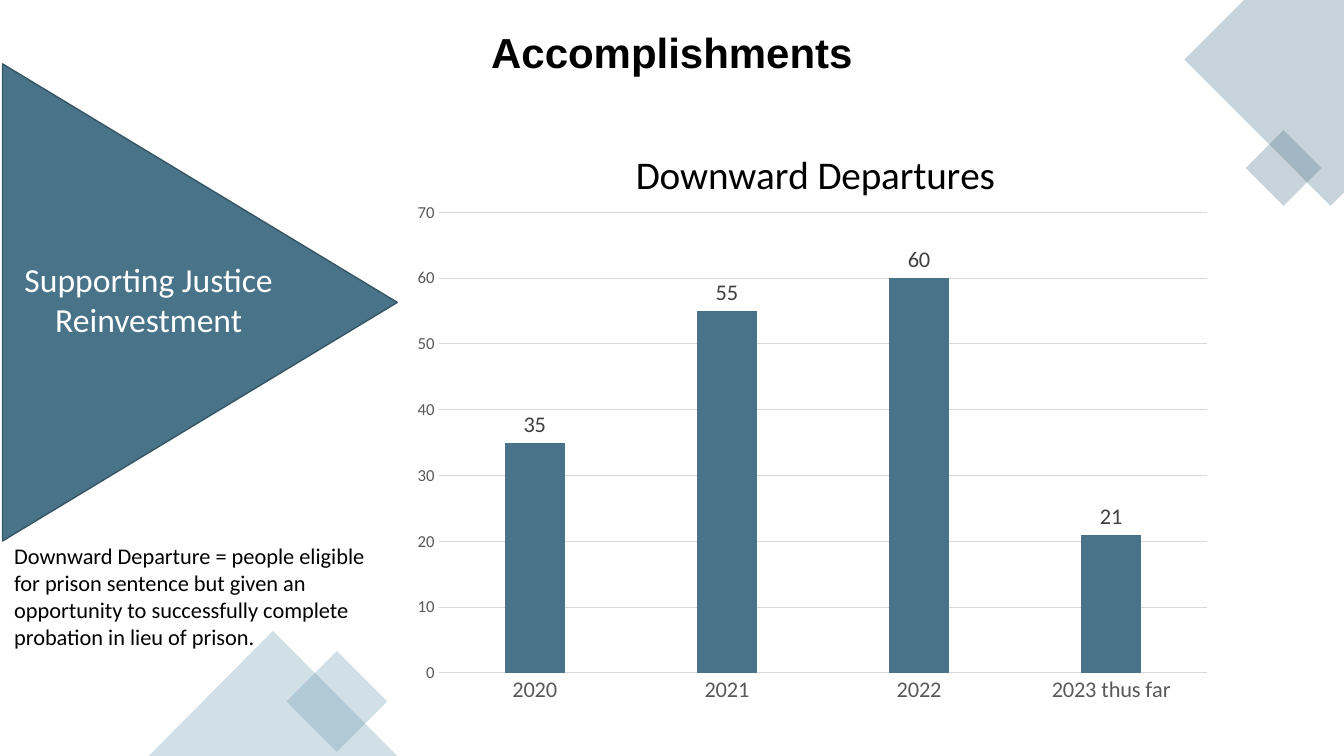
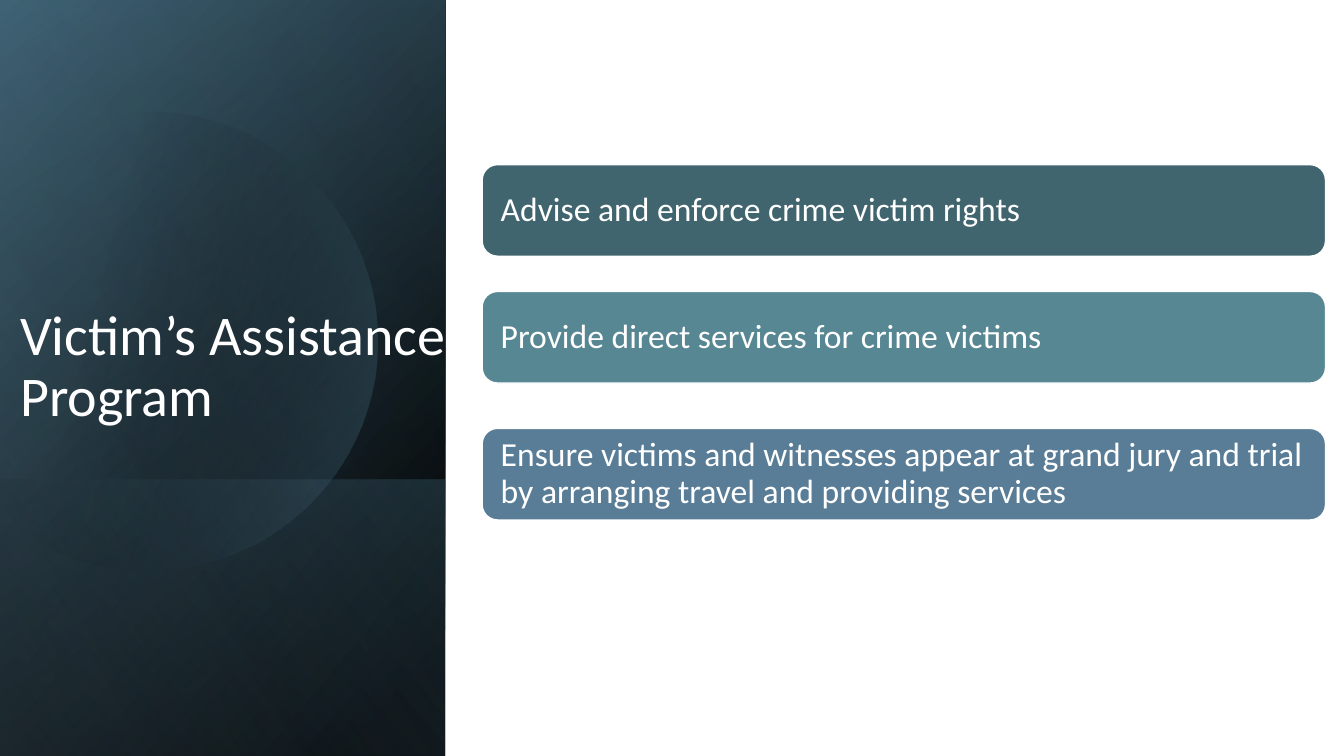
import math

from lxml import etree
from pptx import Presentation
from pptx.chart.data import CategoryChartData
from pptx.dml.color import RGBColor
from pptx.enum.chart import XL_CHART_TYPE, XL_LABEL_POSITION, XL_TICK_MARK
from pptx.enum.shapes import MSO_SHAPE
from pptx.enum.text import MSO_ANCHOR, MSO_AUTO_SIZE, PP_ALIGN
from pptx.oxml.ns import qn
from pptx.util import Inches, Pt

COLUMNS, ROWS = 160, 90
CELL = Inches(7.5) / ROWS
TITLE_ONLY = 5

LEFT, CENTER = PP_ALIGN.LEFT, PP_ALIGN.CENTER
TOP, MIDDLE, BOTTOM = MSO_ANCHOR.TOP, MSO_ANCHOR.MIDDLE, MSO_ANCHOR.BOTTOM
TRIANGLE = MSO_SHAPE.ISOSCELES_TRIANGLE
DIAMOND = MSO_SHAPE.DIAMOND
RECTANGLE = MSO_SHAPE.RECTANGLE
ROUNDED = MSO_SHAPE.ROUNDED_RECTANGLE
COLUMN_CHART = XL_CHART_TYPE.COLUMN_CLUSTERED
OUTSIDE_END = XL_LABEL_POSITION.OUTSIDE_END
NO_TICK = XL_TICK_MARK.NONE

COLORS = {
    "white": "FFFFFF",
    "black": "000000",
    "steel": "497388",
    "steel edge": "365565",
    "sky": "6997AF",
    "pale": "89AEC0",
    "deep": "375666",
    "pine": "41656E",
    "teal": "578793",
    "slate": "5A7D97",
    "grid": "D9D9D9",
    "axis text": "595959",
    "label text": "404040",
}


def rgb(name):
    return RGBColor.from_string(COLORS[name])


def cells(*values):
    return [round(value * CELL) for value in values]


def set_alphas(shape, alphas):
    """Give each colour of the shape's fill its opacity in percent."""
    colors = shape.element.spPr.iter(qn("a:srgbClr"))
    for color, alpha in zip(colors, alphas):
        if alpha < 100:
            etree.SubElement(color, qn("a:alpha")).set("val", str(alpha * 1000))


def place_in_chart(parent, index, **shares):
    """Pin a chart part to shares of the chart's size."""
    for old_layout in parent.findall(qn("c:layout")):
        parent.remove(old_layout)
    layout = etree.Element(qn("c:layout"))
    parent.insert(index, layout)
    manual = etree.SubElement(layout, qn("c:manualLayout"))
    settings = {"xMode": "edge", "yMode": "edge", **shares}
    if "w" in shares:
        settings = {"layoutTarget": "inner", **settings}
    for name, value in settings.items():
        etree.SubElement(manual, qn(f"c:{name}")).set("val", str(value))


class Deck:
    font = "Calibri"

    def __init__(self):
        self.presentation = Presentation()
        self.presentation.slide_width, self.presentation.slide_height = cells(COLUMNS, ROWS)
        self.slide = None

    def add_slide(self):
        layout = self.presentation.slide_layouts[TITLE_ONLY]
        self.slide = self.presentation.slides.add_slide(layout)

    def style_font(self, font, size, color, name=None, bold=False):
        font.name = name or self.font
        font.size = Pt(size)
        font.bold = bold
        font.color.rgb = rgb(color)

    def fill_text(self, shape, text, size, color="black", align=LEFT, anchor=TOP,
                  spacing=None, name=None, bold=False):
        frame = shape.text_frame
        frame.word_wrap = True
        frame.auto_size = MSO_AUTO_SIZE.NONE
        frame.vertical_anchor = anchor
        paragraph = frame.paragraphs[0]
        paragraph.alignment = align
        paragraph.line_spacing = spacing
        run = paragraph.add_run()
        run.text = text
        self.style_font(run.font, size, color, name, bold)

    def title(self, text, box, size, **style):
        title = self.slide.shapes.title
        title.left, title.top, title.width, title.height = cells(*box)
        self.fill_text(title, text, size, spacing=0.9, **style)
        self.slide.shapes.element.append(title.element)  # in front of the backdrop

    def text(self, text, box, size, **style):
        self.fill_text(self.slide.shapes.add_textbox(*cells(*box)), text, size, **style)

    def finish(self, shape, fill, alpha=100, line=None):
        shape.shadow.inherit = False
        shape.fill.solid()
        shape.fill.fore_color.rgb = rgb(fill)
        set_alphas(shape, [alpha])
        if line:
            shape.line.color.rgb = rgb(line)
            shape.line.width = Pt(1)
        else:
            shape.line.fill.background()
        return shape

    def shape(self, kind, box, fill, **style):
        return self.finish(self.slide.shapes.add_shape(kind, *cells(*box)), fill, **style)

    def outline(self, points, fill, **style):
        start, *others = [cells(*point) for point in points]
        builder = self.slide.shapes.build_freeform(*start, scale=1.0)
        builder.add_line_segments(others, close=True)
        return self.finish(builder.convert_to_shape(), fill, **style)

    def gradient(self, shape, angle, *stops):
        """Fill with (position, colour, opacity) stops; the angle runs clockwise."""
        shape.fill.gradient()
        shape.fill.gradient_angle = 360 - angle
        for stop, (position, color, _) in zip(shape.fill.gradient_stops, stops):
            stop.position = position / 100
            stop.color.rgb = rgb(color)
        set_alphas(shape, [alpha for _, _, alpha in stops])

    def card(self, text, box, fill):
        card = self.shape(ROUNDED, box, fill, line="white")
        card.text_frame.margin_left = card.text_frame.margin_right = Inches(0.14)
        self.fill_text(card, text, 24, color="white", anchor=MIDDLE, spacing=0.9)

    def column_chart(self, title, box, categories, values):
        data = CategoryChartData()
        data.categories = categories
        data.add_series("Series 1", values)
        chart = self.slide.shapes.add_chart(COLUMN_CHART, *cells(*box), data).chart
        self.style_font(chart.font, 10, "black")
        chart.has_legend = False

        chart.has_title = True
        run = chart.chart_title.text_frame.paragraphs[0].add_run()
        run.text = title
        self.style_font(run.font, 28, "black")
        chart_space = chart.element
        place_in_chart(chart_space.find(".//" + qn("c:title")), 1, x=0.28, y=0.04)
        place_in_chart(chart_space.find(".//" + qn("c:plotArea")), 0,
                       x=0.05, y=0.16, w=0.93, h=0.77)

        value_axis, category_axis = chart.value_axis, chart.category_axis
        for axis, size in ((value_axis, 12), (category_axis, 16)):
            axis.major_tick_mark = axis.minor_tick_mark = NO_TICK
            self.style_font(axis.tick_labels.font, size, "axis text")
        value_axis.minimum_scale, value_axis.maximum_scale = 0, 70
        value_axis.major_unit = 10
        value_axis.format.line.fill.background()
        for line in (value_axis.major_gridlines.format.line, category_axis.format.line):
            line.color.rgb = rgb("grid")
            line.width = Pt(0.75)

        plot = chart.plots[0]
        plot.vary_by_categories = False
        plot.gap_width, plot.overlap = 219, -27
        fill = plot.series[0].format.fill
        fill.solid()
        fill.fore_color.rgb = rgb("steel")
        plot.has_data_labels = True
        labels = plot.data_labels
        labels.show_value = True
        labels.position = OUTSIDE_END
        self.style_font(labels.font, 16, "label text")


def accomplishments(deck):
    deck.add_slide()
    corner = [(160, 0), (148.1, 0), (141, 7.1), (158.4, 24.5), (160, 22.9)]
    deck.outline(corner, "steel", alpha=30)
    deck.shape(DIAMOND, (148.3, 15.5, 9, 9), "steel", alpha=30)
    deck.shape(DIAMOND, (34.1, 77.5, 12, 12), "sky", alpha=30)
    deck.shape(TRIANGLE, (17.7, 75.1, 29.6, 14.9), "sky", alpha=30)
    deck.title("Accomplishments", (0, 1.2, COLUMNS, 10.6), 30,
               align=CENTER, anchor=MIDDLE, name="Arial", bold=True)
    pointer = deck.shape(TRIANGLE, (-4.6, 12.5, 56.8, 47), "steel", line="steel edge")
    pointer.rotation = 90
    deck.text("Supporting Justice Reinvestment", (0, 30.2, 35.4, 10.9), 24,
              color="white", align=CENTER)
    deck.column_chart("Downward Departures", (47.3, 13.9, 98.4, 71.2),
                      ["2020", "2021", "2022", "2023 thus far"], [35, 55, 60, 21])
    deck.text("Downward Departure = people eligible for prison sentence but given an "
              "opportunity to successfully complete probation in lieu of prison.",
              (0.5, 64, 46, 14.2), 16)


def clipped_circle(center_x, center_y, radius, steps=90):
    """Points of a circle whose part left of the slide is cut off."""
    limit = math.acos(-center_x / radius)
    angles = [limit * (2 * step / steps - 1) for step in range(steps + 1)]
    return [(center_x + radius * math.cos(angle), center_y + radius * math.sin(angle))
            for angle in angles]


def victims_assistance(deck):
    deck.add_slide()
    panel_width, band_top = 53, 57.1
    panel = (0, 0, panel_width, ROWS)
    band = (0, band_top, panel_width, ROWS - band_top)
    clear = (0, "black", 0)
    for box, angle, *stops in (
        (panel, 220, (8, "black", 100), (100, "deep", 100)),
        (panel, 240, clear, (99, "steel", 46)),
        (band, 140, (2, "steel", 29), (100, "black", 30)),
    ):
        deck.gradient(deck.shape(RECTANGLE, box, "black"), angle, *stops)
    circle = deck.outline(clipped_circle(17.6, 40.6, 27.3), "black")
    deck.gradient(circle, 14, (29, "black", 0), (100, "steel", 43))
    deck.gradient(deck.shape(RECTANGLE, panel, "black"), 150, clear, (99, "pale", 11))

    deck.title("Victim’s Assistance Program", (1.2, 32.5, 55.1, 19.1), 40,
               color="white", anchor=BOTTOM)
    for top, fill, text in (
        (19.6, "pine", "Advise and enforce crime victim rights"),
        (34.7, "teal", "Provide direct services for crime victims"),
        (51, "slate", "Ensure victims and witnesses appear at grand jury and trial "
                      "by arranging travel and providing services"),
    ):
        deck.card(text, (57.4, top, 100.4, 10.9), fill)


def main():
    deck = Deck()
    accomplishments(deck)
    victims_assistance(deck)
    deck.presentation.save("out.pptx")


if __name__ == "__main__":
    main()
